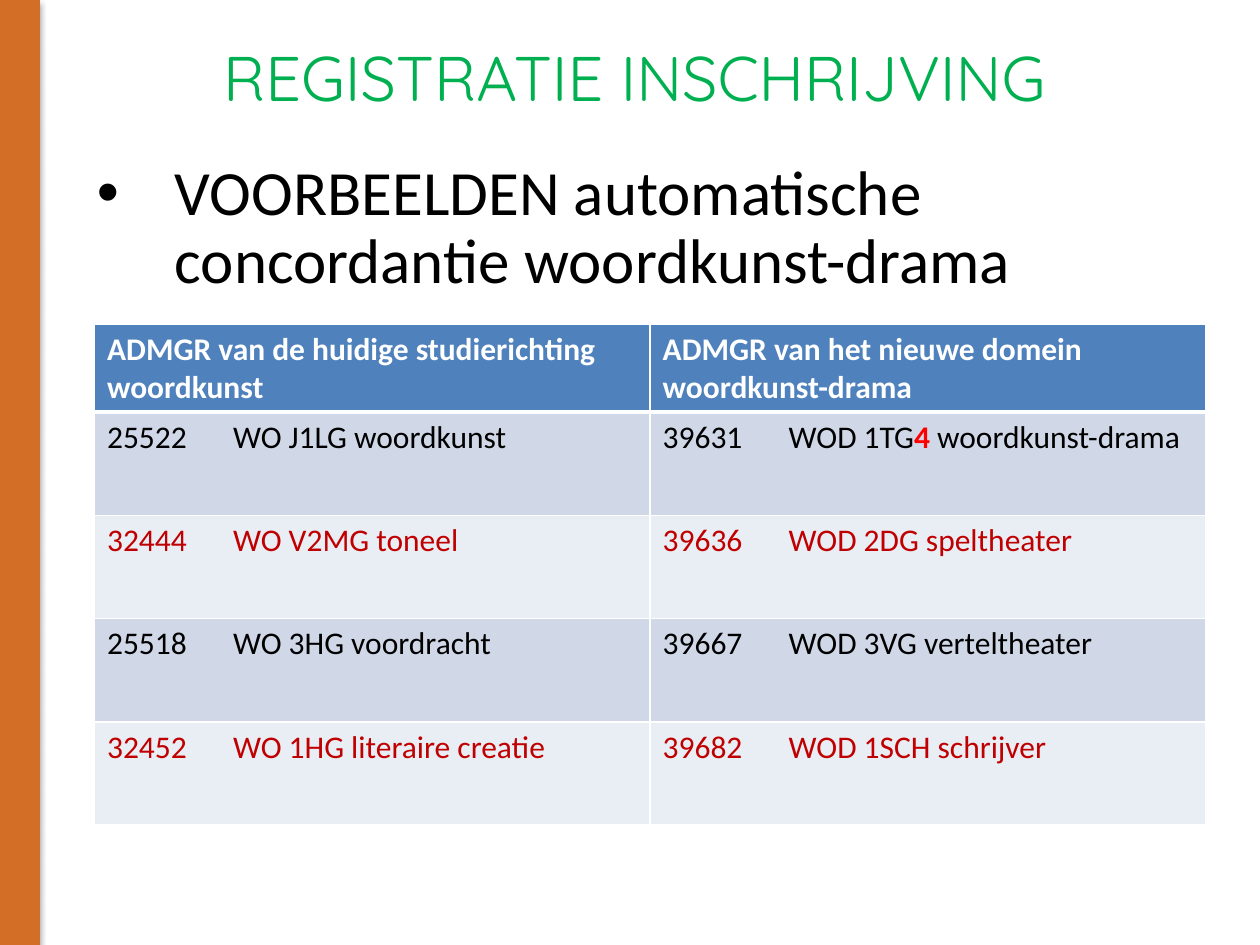
from lxml import etree
from pptx import Presentation
from pptx import util as u
from pptx.dml.color import RGBColor
from pptx.enum import shapes, text
from pptx.oxml import parse_xml
from pptx.oxml.ns import nsdecls, qn


def color(value):
    return RGBColor.from_string(value)


def style(font, name, size, value, bold=False):
    font.name = name
    font.size = u.Pt(size)
    font.bold = bold
    font.color.rgb = color(value)


presentation = Presentation()
presentation.slide_width = u.Inches(10)
presentation.slide_height = u.Inches(7.5)
slide = presentation.slides.add_slide(presentation.slide_layouts[6])

bar = slide.shapes.add_shape(
    shapes.MSO_SHAPE.RECTANGLE, 0, 0, u.Inches(0.31), u.Inches(7.5))
bar.fill.solid()
bar.fill.fore_color.rgb = color("D26E25")
bar.line.color.rgb = color("D26E25")
bar.line.width = u.Pt(0.75)
bar.shadow.inherit = False
effects = bar.element.spPr.find(qn("a:effectLst"))
effects.append(parse_xml(
    f'<a:outerShdw {nsdecls("a")} blurRad="{u.Pt(3.1)}" dist="{u.Pt(1.8)}" '
    'dir="5400000" rotWithShape="0"><a:srgbClr val="000000">'
    '<a:alpha val="35000"/></a:srgbClr></a:outerShdw>'))

title = slide.shapes.add_textbox(
    u.Inches(0.98), u.Inches(0.21), u.Inches(8.11), u.Inches(0.79))
title.text_frame.word_wrap = True
title.text_frame.vertical_anchor = text.MSO_ANCHOR.MIDDLE
title.text_frame.text = "REGISTRATIE INSCHRIJVING"
paragraph = title.text_frame.paragraphs[0]
paragraph.alignment = text.PP_ALIGN.CENTER
style(paragraph.runs[0].font, "Quicksand", 36, "00B050")

body = slide.shapes.add_textbox(
    u.Inches(0.67), u.Inches(1.23), u.Inches(8.9), u.Inches(5.2))
body.text_frame.word_wrap = True
body.text_frame.margin_bottom = 0
body.text_frame.text = "VOORBEELDEN automatische concordantie woordkunst-drama"
paragraph = body.text_frame.paragraphs[0]
paragraph.line_spacing = 0.9
properties = paragraph._p.get_or_add_pPr()
properties.set("marL", str(u.Inches(0.62)))
properties.set("indent", str(u.Inches(-0.62)))
etree.SubElement(properties, qn("a:buFont"), typeface="Arial")
etree.SubElement(properties, qn("a:buChar"), char="•")
style(paragraph.runs[0].font, "Calibri", 36, "000000")

rows = [
    ("ADMGR van de huidige studierichting woordkunst",
     "ADMGR van het nieuwe domein woordkunst-drama"),
    ("25522\tWO J1LG woordkunst", "39631\tWOD 1TG|4| woordkunst-drama"),
    ("32444\tWO V2MG toneel", "39636\tWOD 2DG speltheater"),
    ("25518\tWO 3HG voordracht", "39667\tWOD 3VG verteltheater"),
    ("32452\tWO 1HG literaire creatie", "39682\tWOD 1SCH schrijver"),
]
table = slide.shapes.add_table(
    len(rows), 2, u.Inches(0.75), u.Inches(2.57), u.Inches(8.82), u.Inches(3.98)).table
for column in table.columns:
    column.width = u.Inches(4.41)

for row_index, row in enumerate(rows):
    header = row_index == 0
    table.rows[row_index].height = u.Inches(0.7 if header else 0.82)
    if header:
        fill, ink = "4F81BD", "FFFFFF"
    elif row_index % 2:
        fill, ink = "D0D8E8", "000000"
    else:
        fill, ink = "E9EDF4", "C00000"
    for column_index, content in enumerate(row):
        cell = table.cell(row_index, column_index)
        for side in "LRTB":
            thick = (header and side == "B") or (row_index == 1 and side == "T")
            cell._tc.get_or_add_tcPr().append(parse_xml(
                f'<a:ln{side} {nsdecls("a")} w="{u.Pt(3 if thick else 1)}"><a:solidFill>'
                f'<a:srgbClr val="FFFFFF"/></a:solidFill></a:ln{side}>'))
        cell.fill.solid()
        cell.fill.fore_color.rgb = color(fill)
        paragraph = cell.text_frame.paragraphs[0]
        for part_index, part in enumerate(content.split("|")):
            run = paragraph.add_run()
            run.text = part
            marked = part_index == 1
            style(run.font, "Calibri", 18, "FF0000" if marked else ink, header or marked)

presentation.save("out.pptx")
